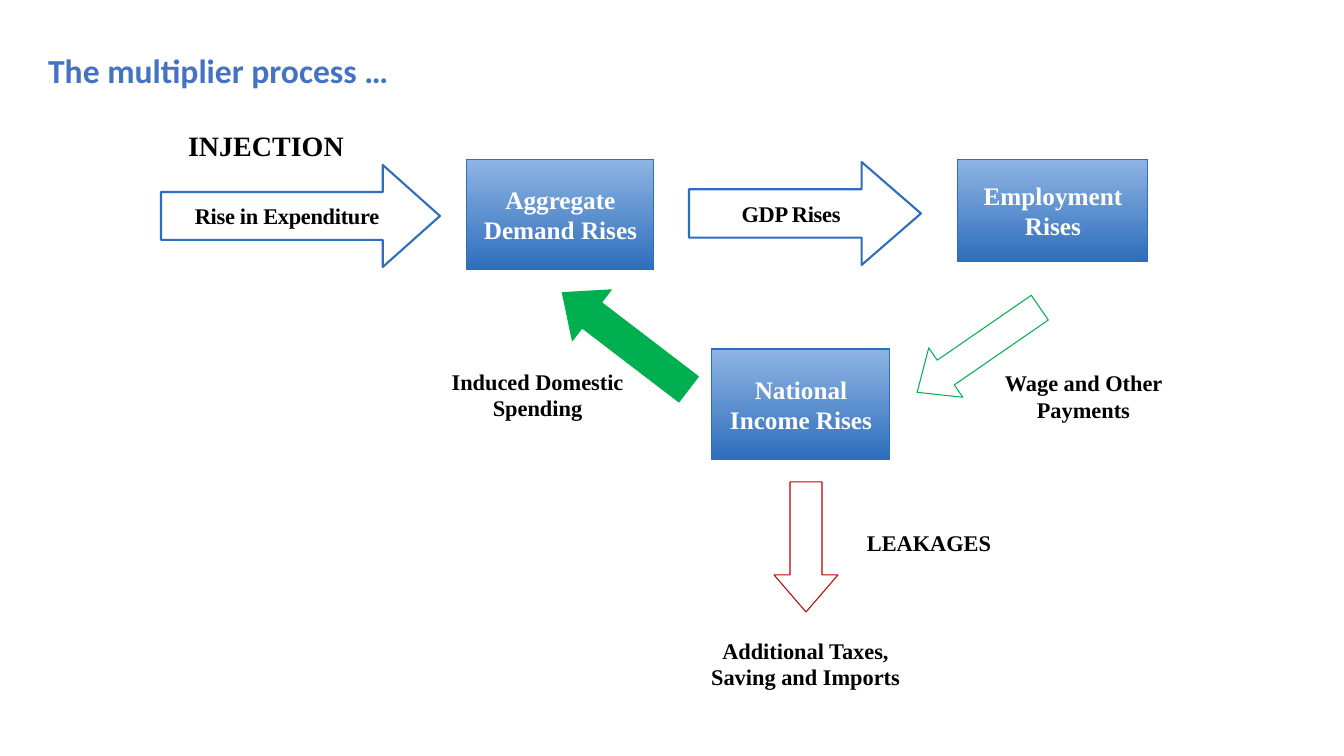
import pptx
import pptx.util
import pptx.dml.color
import pptx.enum.shapes
import pptx.enum.text

PX = 914400 / 100.8
SERIF = "Times New Roman"
BLUE, GREEN, RED, WHITE = "2E6EBC", "00B050", "C00000", "FFFFFF"
SHAPE = pptx.enum.shapes.MSO_SHAPE
ALIGN = pptx.enum.text.PP_ALIGN


def px(n):
    return pptx.util.Emu(round(n * PX))


def rgb(value):
    return pptx.dml.color.RGBColor.from_string(value)


def place(box, dx, dy, w, h):
    return px(box[0] + dx), px(box[1] + dy), px(w), px(h)


def write(tf, text, size=16, font=SERIF, color="000000", align=ALIGN.CENTER,
          after=6, spacing=None, tracking=None):
    tf.word_wrap = True
    tf.auto_size = pptx.enum.text.MSO_AUTO_SIZE.NONE
    tf.vertical_anchor = pptx.enum.text.MSO_ANCHOR.MIDDLE
    p = tf.paragraphs[0]
    p.alignment = align
    p.space_before = pptx.util.Pt(0)
    p.space_after = pptx.util.Pt(after)
    p.line_spacing = spacing
    r = p.add_run()
    r.text = text
    r.font.size = pptx.util.Pt(size)
    r.font.name = font
    r.font.bold = True
    r.font.color.rgb = rgb(color)
    if tracking:
        r.font._element.set("spc", str(tracking))


def add_label(s, at, text, **fmt):
    write(s.shapes.add_textbox(*at).text_frame, text, **fmt)


def add_outlined(s, kind, at, line, width):
    sp = s.shapes.add_shape(kind, *at)
    sp.shadow.inherit = False
    sp.line.color.rgb = rgb(line)
    sp.line.width = pptx.util.Pt(width)
    return sp


def add_stage(s, at, text):
    sp = add_outlined(s, SHAPE.RECTANGLE, at, BLUE, 0.75)
    sp.fill.gradient()
    sp.fill.gradient_angle = 270
    for stop, color in zip(sp.fill.gradient_stops, ("8EB4E3", BLUE)):
        stop.color.rgb = rgb(color)
    write(sp.text_frame, text, size=18, color=WHITE)


def add_arrow(s, kind, at, line, fill=WHITE, width=0.75, adj=(0.5, 0.58), rotation=0):
    sp = add_outlined(s, kind, at, line, width)
    sp.fill.solid()
    sp.fill.fore_color.rgb = rgb(fill)
    sp.adjustments[0], sp.adjustments[1] = adj
    sp.rotation = rotation
    return sp


def add_step(s, at, text, head):
    sp = add_arrow(s, SHAPE.RIGHT_ARROW, at, BLUE, width=1.5, adj=(0.469, head))
    write(sp.text_frame, text, tracking=-20)


def title_region(s, box):
    title = s.shapes.title
    title.left, title.top, title.width, title.height = place(box, 0, 0, *box[2:])
    write(title.text_frame, "The multiplier process …", size=24, font="Calibri",
          color="4472C4", align=ALIGN.LEFT, after=0, spacing=0.9)


def injection_region(s, box):
    add_step(s, place(box, 1, 48, 279, 102), "Rise in Expenditure", 0.56)
    add_label(s, place(box, 0, 0, 212, 56), "INJECTION", size=20)


def cycle_region(s, box):
    add_stage(s, place(box, 40, 0, 187, 111), "Aggregate Demand Rises")
    add_step(s, place(box, 262, 3, 232, 103), "GDP Rises", 0.576)
    add_stage(s, place(box, 531, 0, 190, 103), "Employment Rises")
    add_arrow(s, SHAPE.LEFT_ARROW, place(box, 477, 161, 149, 60), GREEN, rotation=325.4)
    add_label(s, place(box, 557, 200, 199, 75), "Wage and Other Payments")
    add_stage(s, place(box, 285, 190, 178, 111), "National Income Rises")
    add_arrow(s, SHAPE.LEFT_ARROW, place(box, 119, 150, 159, 64), GREEN, fill=GREEN,
              rotation=37.4)
    add_label(s, place(box, 0, 200, 221, 71), "Induced Domestic Spending")


def leakages_region(s, box):
    add_arrow(s, SHAPE.LEFT_ARROW, place(box, 61, 33, 130, 64), RED, rotation=270)
    add_label(s, place(box, 170, 33, 158, 56), "LEAKAGES")
    add_label(s, place(box, 0, 145, 251, 73), "Additional Taxes, Saving and Imports")


def main():
    prs = pptx.Presentation()
    prs.slide_width, prs.slide_height = px(1344), px(756)
    s = prs.slides.add_slide(prs.slide_layouts[5])
    s.background.fill.solid()
    s.background.fill.fore_color.rgb = rgb(WHITE)
    title_region(s, (38, 29, 1290, 88))
    injection_region(s, (160, 117, 280, 150))
    cycle_region(s, (427, 159, 756, 301))
    leakages_region(s, (680, 482, 328, 218))
    prs.save("out.pptx")


if __name__ == "__main__":
    main()
